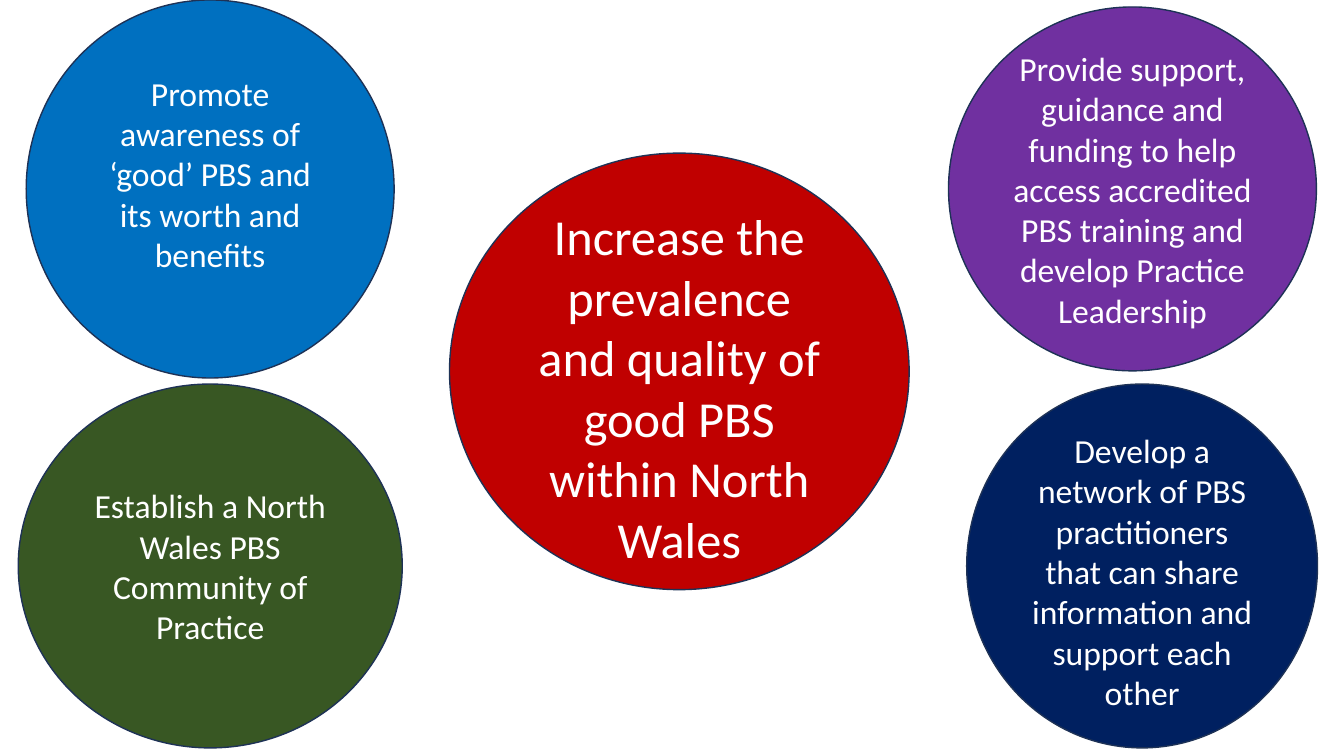
from dataclasses import dataclass

from pptx import Presentation
from pptx.dml.color import RGBColor
from pptx.enum.shapes import MSO_SHAPE
from pptx.enum.text import MSO_ANCHOR, PP_ALIGN
from pptx.slide import Slide
from pptx.util import Pt

COLORS = {
    "blue": "0070C0",
    "navy": "002060",
    "green": "385723",
    "red": "C00000",
    "purple": "7030A0",
    "outline": "1E3256",
    "text": "FFFFFF",
}
INSET = 3.6
ROW_TOP, ROW_HEIGHT = 274.3, 259.9


@dataclass
class Goal:
    text: str
    color: str
    left: float
    top: float
    width: float
    height: float
    size: float = 24
    shift: float = 0  # moves the text down, or up if negative


GOALS = [
    Goal("Promote awareness of ‘good’ PBS and its worth and benefits",
         "blue", 18.7, 0, 262.8, 270, shift=-11),
    Goal("Develop a network of PBS practitioners that can share "
         "information and support each other",
         "navy", 690.5, ROW_TOP, 250.6, ROW_HEIGHT, shift=3.65),
    Goal("Establish a North Wales PBS Community of Practice",
         "green", 13, ROW_TOP, 274.3, ROW_HEIGHT),
    Goal("Increase the prevalence and quality of good PBS within North Wales",
         "red", 321.1, 109.4, 328.3, 311.8, size=36, shift=11),
    Goal("Provide support, guidance and funding to help access accredited "
         "PBS training and develop Practice Leadership",
         "purple", 677.5, 5, 262.8, ROW_HEIGHT),
]


def rgb(name: str) -> RGBColor:
    return RGBColor.from_string(COLORS[name])


def draw_goal(s: Slide, goal: Goal) -> None:
    # Circle
    box = [Pt(v) for v in (goal.left, goal.top, goal.width, goal.height)]
    sp = s.shapes.add_shape(MSO_SHAPE.OVAL, *box)
    sp.shadow.inherit = False
    sp.fill.solid()
    sp.fill.fore_color.rgb = rgb(goal.color)
    sp.line.color.rgb = rgb("outline")
    sp.line.width = Pt(1)

    # Text, offset from the middle by unequal insets
    tf = sp.text_frame
    frame_format = {
        "word_wrap": True,
        "vertical_anchor": MSO_ANCHOR.MIDDLE,
        "margin_top": Pt(INSET + 2 * max(goal.shift, 0)),
        "margin_bottom": Pt(INSET + 2 * max(-goal.shift, 0)),
    }
    for name, value in frame_format.items():
        setattr(tf, name, value)
    p = tf.paragraphs[0]
    p.alignment = PP_ALIGN.CENTER
    r = p.add_run()
    r.text = goal.text
    for name, value in {"name": "Calibri", "size": Pt(goal.size)}.items():
        setattr(r.font, name, value)
    r.font.color.rgb = rgb("text")


def main() -> None:
    prs = Presentation()
    prs.slide_width, prs.slide_height = Pt(960), Pt(540)
    s = prs.slides.add_slide(prs.slide_layouts[6])
    for goal in GOALS:
        draw_goal(s, goal)
    prs.save("out.pptx")


if __name__ == "__main__":
    main()
